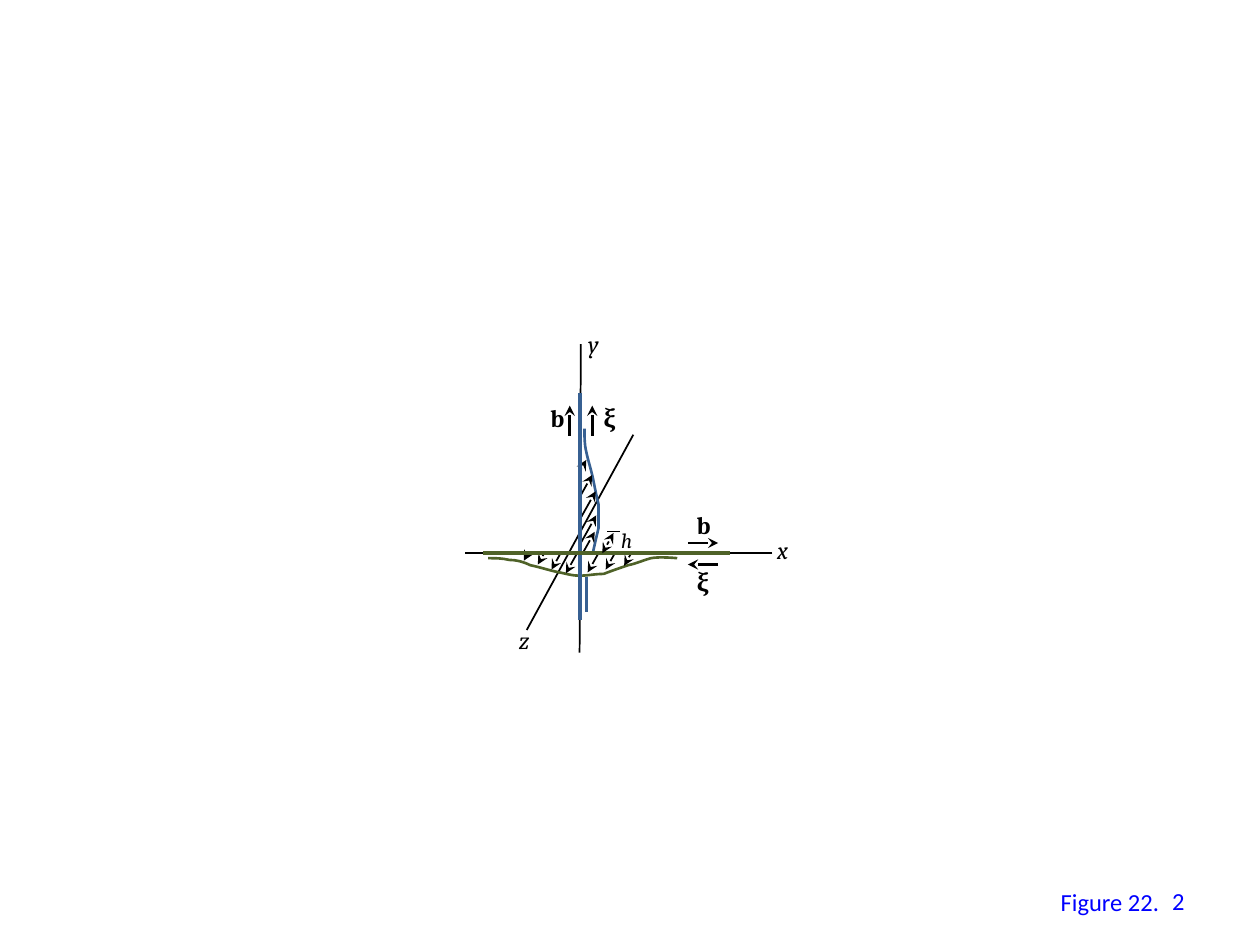
from dataclasses import dataclass
from lxml.etree import SubElement
from pptx import Presentation
from pptx.dml.color import RGBColor as RGB
from pptx.enum.shapes import MSO_CONNECTOR as CONN
from pptx.enum.text import MSO_ANCHOR as ANCHOR, MSO_AUTO_SIZE as AUTO, PP_ALIGN as ALIGN
from pptx.oxml.ns import qn
from pptx.util import Pt


@dataclass(frozen=True)
class Theme:
    black: RGB = RGB(0, 0, 0)
    blue: RGB = RGB(0x37, 0x60, 0x92)
    green: RGB = RGB(0x4F, 0x62, 0x28)
    footer: RGB = RGB(0, 0, 0xFF)
    math: str = "Cambria"
    sans: str = "Calibri"
    size: int = 14
    small: int = 12
    thin: float = 1
    medium: float = 1.5
    thick: float = 2.25


T = Theme()
X0, Y0 = 331.6, 316.1
SLANT = 0.56

AXES = [
    (441.4, Y0, 265.7, Y0),
    (331.2, 373, 331.9, 196.6),
    (301, 360, 361.9, 248.4),
]
CURVES = [
    (T.blue, [(334, 244.8), (334, 249.1), (334.1, 253.6), (335.3, 258.3),
              (336.5, 263), (338.2, 269.2), (339.3, 274.2), (340.4, 279.2),
              (341.3, 283.7), (341.7, 288.2), (342.1, 292.7), (342.2, 297),
              (341.7, 301.6), (341.2, 306.2), (339.1, 315.4), (339.1, 315.4)]),
    (T.blue, [(335.4, 330.5), (335, 333.2), (334.9, 335.4), (334.8, 338.6),
              (334.7, 341.8), (334.8, 349.9), (334.8, 349.9)]),
    (T.green, [(278.6, 318.7), (282.6, 318.8), (286.7, 319), (290.8, 319.7),
               (294.9, 320.4), (298.6, 321.4), (303.3, 322.7), (308, 324),
               (314.1, 326.3), (318.8, 327.4), (323.5, 328.5), (327, 329),
               (331.3, 329), (335.6, 329), (340.2, 328.5), (344.9, 327.5),
               (349.6, 326.5), (359.3, 323.2), (359.3, 323.2), (363.8, 321.7),
               (367.8, 319.8), (372.4, 319), (377, 318.2), (386.6, 318.7),
               (386.6, 318.7)]),
]
DOWN_ARROWS = [(351.4, 9.4), (360.7, 7.2), (342, 11), (329.8, 11.5),
               (320.4, 9.4), (311, 6.5), (301.7, 4.3)]
UP_ARROWS = [(333.4, 315.4, 11.5), (331.9, 310.3, 15.8), (331.9, 295.9, 15.1),
             (331.9, 283, 11.5), (331.4, 269.3, 6.5)]
BEAMS = [
    (T.blue, (X0, 354.2, X0, 224.6)),
    (T.green, (416.9, Y0, 275.8, Y0)),
]
VECTORS = [
    (393.1, 310.3, 410.4, 310.3),
    (410.4, 322.6, 393.1, 322.6),
    (338.4, 249.1, 338.4, 231.8),
    (325.6, 249.1, 325.6, 231.8),
]
HEIGHT_MARK = (344.2, 316.1, 350.6, 304.6)
HEIGHT_BAR = (347, 303.8, 354.2, 303.8)
LABELS = [
    ("x", 437, 302.4, 24.5, T.size),
    ("y", 329, 184.3, 24.5, T.size),
    ("z", 289.4, 353.5, 23.8, T.size),
    ("b", 391, 288, 22.3, T.size),
    ("ξ", 391, 320.4, 21.6, T.size),
    ("b", 307.4, 226.8, 22.3, T.size),
    ("ξ", 337.7, 226.8, 21.6, T.size),
    ("h", 347.8, 298.1, 23.8, T.small),
]
BOLD = "bξ"


def add_line(s, ends, color=T.black, width=T.thin, head=False, tail=False):
    c = s.shapes.add_connector(CONN.STRAIGHT, *map(Pt, ends))
    c.line.color.rgb = color
    c.line.width = Pt(width)
    ln = c.line._get_or_add_ln()
    for tag, on in (("a:headEnd", head), ("a:tailEnd", tail)):
        if on:
            SubElement(ln, qn(tag), type="stealth")
    SubElement(c._element.spPr, qn("a:effectLst"))


def add_curve(s, color, points):
    fb = s.shapes.build_freeform(*points[0], scale=Pt(1))
    fb.add_line_segments(points[1:], close=False)
    sp = fb.convert_to_shape()
    sp.shadow.inherit = False
    sp.fill.background()
    sp.line.color.rgb = color
    sp.line.width = Pt(T.medium)
    path = next(sp._element.iter(qn("a:path")))
    steps = path.findall(qn("a:lnTo"))
    for i in range(0, len(steps), 3):
        bezier = SubElement(path, qn("a:cubicBezTo"))
        for step in steps[i:i + 3]:
            bezier.append(step[0])
            path.remove(step)


def add_text(s, text, x, y, w, h, font, size, color, wrap=False):
    sp = s.shapes.add_textbox(*map(Pt, (x, y, w, h)))
    tf = sp.text_frame
    tf.word_wrap = wrap
    tf.auto_size = AUTO.NONE if wrap else AUTO.SHAPE_TO_FIT_TEXT
    p = tf.paragraphs[0]
    p.text = text
    p.font.name, p.font.size = font, Pt(size)
    p.font.color.rgb = color
    return tf, p


def main():
    prs = Presentation()
    prs.slide_width, prs.slide_height = Pt(720), Pt(540)
    s = prs.slides.add_slide(prs.slide_layouts[6])

    add_text(s, "Figure 22.", 599, 503.3, 71.3, 24.5, T.sans, T.size, T.footer)
    for ends in AXES:
        add_line(s, ends)
    for color, points in CURVES:
        add_curve(s, color, points)
    for x, dy in DOWN_ARROWS:
        add_line(s, (x, Y0, x - SLANT * dy, Y0 + dy), tail=True)
    for x, y, dy in UP_ARROWS:
        add_line(s, (x, y, x + SLANT * dy, y - dy), tail=True)
    for color, ends in BEAMS:
        add_line(s, ends, color, T.thick)
    for ends in VECTORS:
        add_line(s, ends, width=T.medium, tail=True)
    add_line(s, HEIGHT_MARK, head=True, tail=True)
    add_line(s, HEIGHT_BAR)
    for text, x, y, w, size in LABELS:
        tf, p = add_text(s, text, x, y, w, size + 10.3, T.math, size, T.black)
        p.font.bold = text in BOLD
        p.font.italic = text not in BOLD

    tf, p = add_text(s, "2", 516.2, 500.4, 167.8, 28.8, T.sans, T.size, T.footer, wrap=True)
    tf.vertical_anchor = ANCHOR.MIDDLE
    p.alignment = ALIGN.RIGHT
    prs.save("out.pptx")


if __name__ == "__main__":
    main()
